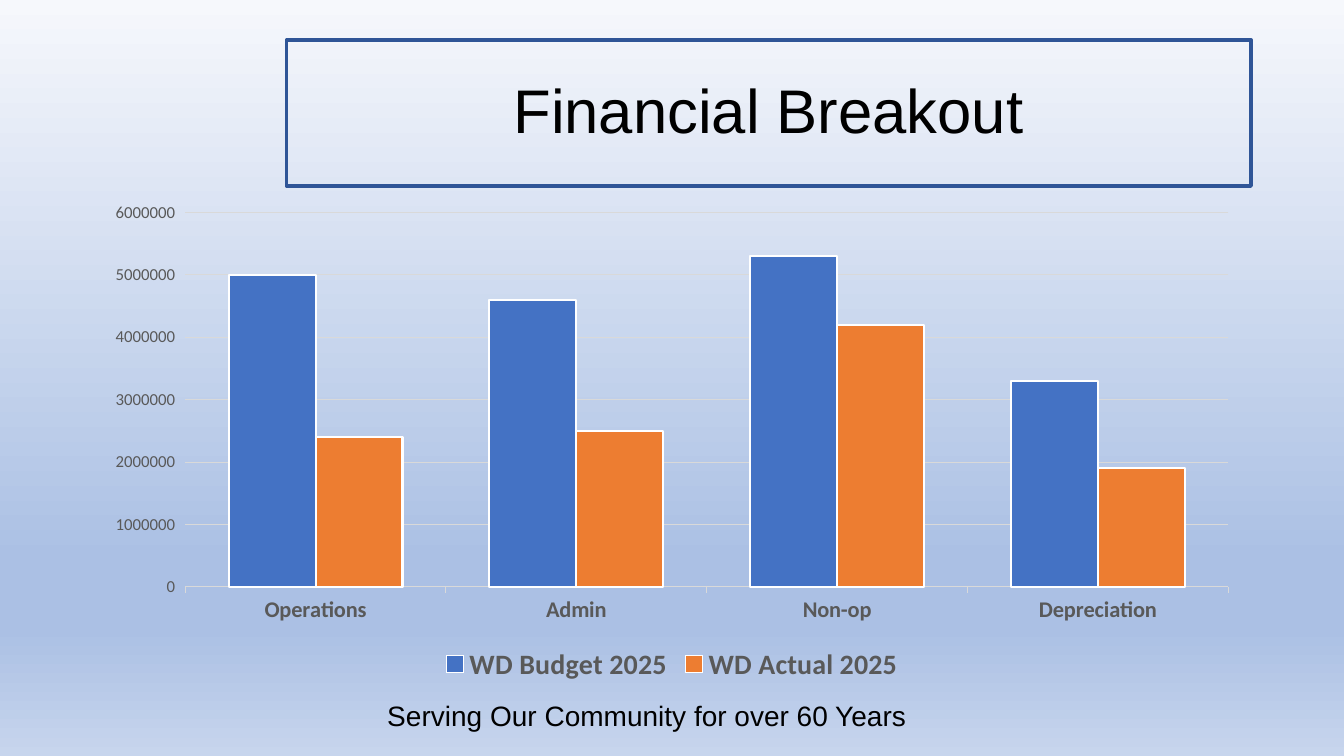
import pptx
import pptx.chart.data
import pptx.dml.color
import pptx.enum.chart
import pptx.enum.shapes
import pptx.enum.text
import pptx.oxml
import pptx.oxml.ns
import pptx.util
from pptx.dml.color import RGBColor
from pptx.util import Cm, Pt

BLACK = RGBColor(0x00, 0x00, 0x00)
WHITE = RGBColor(0xFF, 0xFF, 0xFF)
GREY = RGBColor(0x59, 0x59, 0x59)
PALE_GREY = RGBColor(0xD9, 0xD9, 0xD9)
NAVY = RGBColor(0x2F, 0x55, 0x97)
BLUE = RGBColor(0x44, 0x72, 0xC4)
ORANGE = RGBColor(0xED, 0x7D, 0x31)
BACKGROUND_STOPS = [
    (0, RGBColor(0xF6, 0xF8, 0xFC)),
    (74, RGBColor(0xAB, 0xC0, 0xE4)),
    (83, RGBColor(0xAB, 0xC0, 0xE4)),
    (100, RGBColor(0xC7, 0xD5, 0xED)),
]


def style_font(font, name, size, color, bold=False):
    font.name = name
    font.size = Pt(size)
    font.bold = bold
    font.color.rgb = color


def style_line(line, color, width):
    line.color.rgb = color
    line.width = Pt(width)


prs = pptx.Presentation()
prs.slide_width = Cm(33.87)
prs.slide_height = Cm(19.05)
s = prs.slides.add_slide(prs.slide_layouts[6])

# Background gradient, light at the top
fill = s.background.fill
fill.gradient()
fill.gradient_angle = 270
gradient_stops = s._element.find(".//" + pptx.oxml.ns.qn("a:gsLst"))
for stop in list(gradient_stops):
    gradient_stops.remove(stop)
for position, color in BACKGROUND_STOPS:
    gradient_stops.append(pptx.oxml.parse_xml(
        f'<a:gs {pptx.oxml.ns.nsdecls("a")} pos="{position * 1000}">'
        f'<a:srgbClr val="{color}"/></a:gs>'))

# Title
sp = s.shapes.add_shape(pptx.enum.shapes.MSO_SHAPE.RECTANGLE,
                        Cm(7.22), Cm(1.01), Cm(24.31), Cm(3.68))
sp.shadow.inherit = False
sp.fill.background()
style_line(sp.line, NAVY, 2.5)
tf = sp.text_frame
tf.text = "Financial Breakout"
tf.vertical_anchor = pptx.enum.text.MSO_ANCHOR.MIDDLE
p = tf.paragraphs[0]
p.alignment = pptx.enum.text.PP_ALIGN.CENTER
p.line_spacing = 0.9
style_font(p.runs[0].font, "Arial", 44, BLACK)

# Motto
sp = s.shapes.add_textbox(Cm(9.51), Cm(17.48), Cm(13.97), Cm(1.12))
tf = sp.text_frame
tf.text = "Serving Our Community for over 60 Years"
tf.word_wrap = False
tf.auto_size = pptx.enum.text.MSO_AUTO_SIZE.SHAPE_TO_FIT_TEXT
style_font(tf.paragraphs[0].runs[0].font, "Arial", 20, BLACK)

# Budget and actual columns
data = pptx.chart.data.CategoryChartData()
data.categories = ["Operations", "Admin", "Non-op", "Depreciation"]
data.add_series("WD Budget 2025", [5000000, 4600000, 5300000, 3300000])
data.add_series("WD Actual 2025", [2400000, 2500000, 4200000, 1900000])
chart = s.shapes.add_chart(
    pptx.enum.chart.XL_CHART_TYPE.COLUMN_CLUSTERED,
    Cm(2.33), Cm(4.85), Cm(29.21), Cm(12.47), data).chart
chart.has_title = False
style_font(chart.font, "Calibri", 10, BLACK)

plot = chart.plots[0]
plot.gap_width = 100
plot.overlap = 0
plot.vary_by_categories = False
for series, color in zip(plot.series, [BLUE, ORANGE]):
    series.format.fill.solid()
    series.format.fill.fore_color.rgb = color
    style_line(series.format.line, WHITE, 1.5)

axis = chart.category_axis
axis.major_tick_mark = pptx.enum.chart.XL_TICK_MARK.OUTSIDE
style_line(axis.format.line, PALE_GREY, 0.75)
style_font(axis.tick_labels.font, "Calibri", 16, GREY, bold=True)

axis = chart.value_axis
axis.minimum_scale = 0
axis.maximum_scale = 6000000
axis.major_unit = 1000000
axis.major_tick_mark = pptx.enum.chart.XL_TICK_MARK.OUTSIDE
axis.format.line.fill.background()
axis.has_major_gridlines = True
style_line(axis.major_gridlines.format.line, PALE_GREY, 0.75)
style_font(axis.tick_labels.font, "Calibri", 12, GREY)

chart.has_legend = True
chart.legend.position = pptx.enum.chart.XL_LEGEND_POSITION.BOTTOM
chart.legend.include_in_layout = False
style_font(chart.legend.font, "Calibri", 20, GREY, bold=True)

prs.save("out.pptx")
